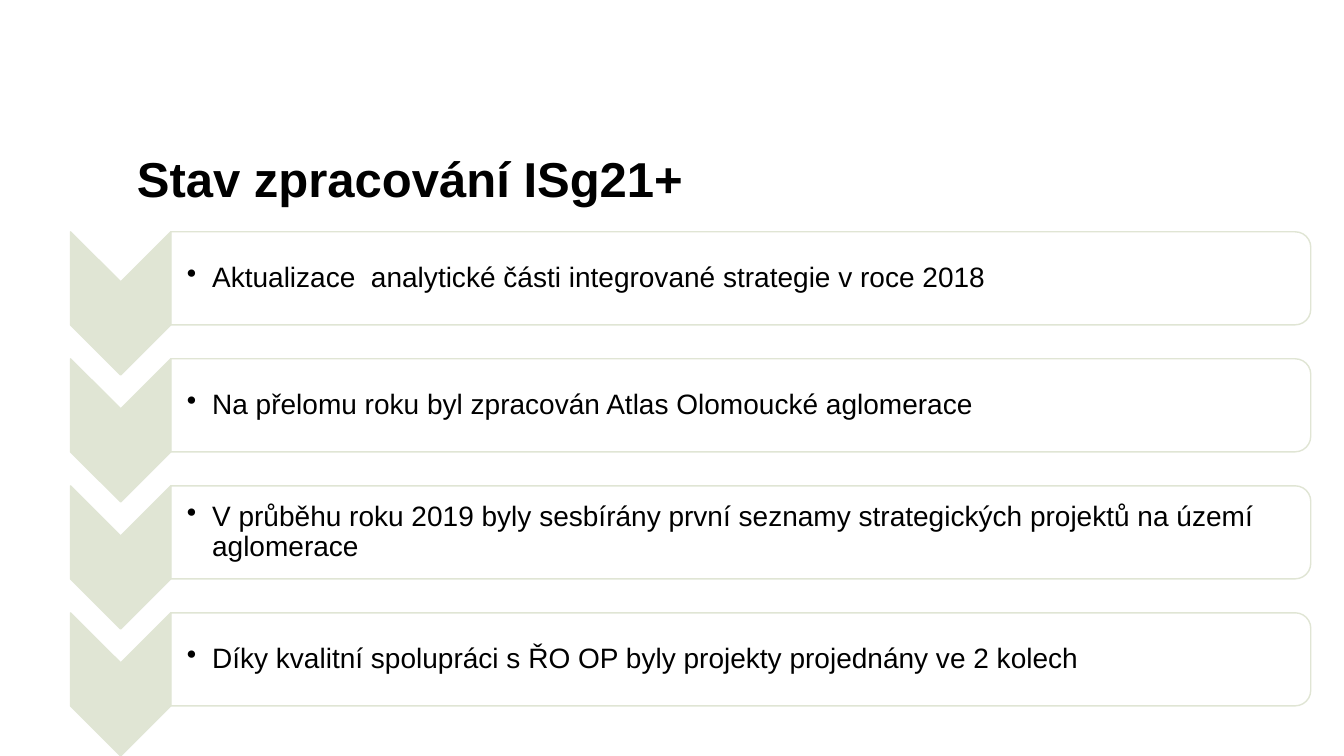
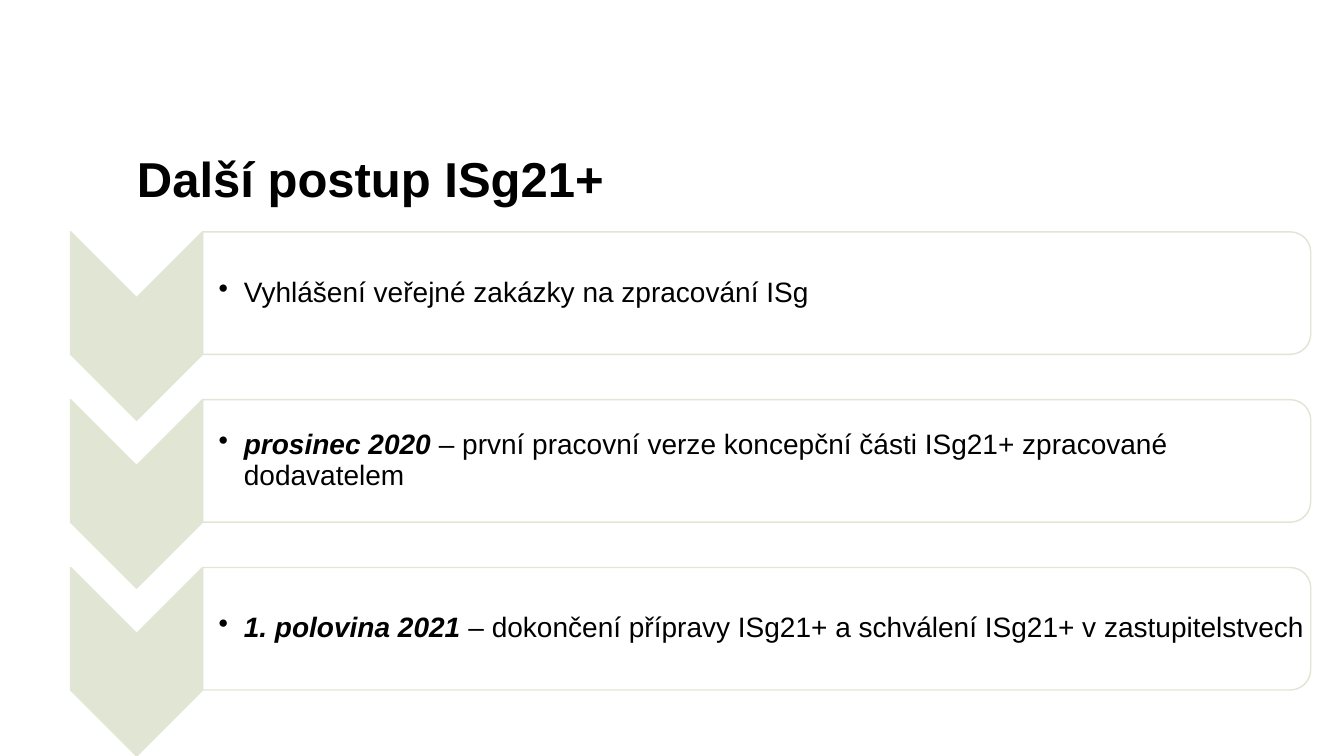
"""Builds two slides that list the steps of a strategy beside downward chevrons."""
from lxml.etree import SubElement
from pptx import Presentation
from pptx.dml.color import RGBColor
from pptx.enum.shapes import MSO_SHAPE
from pptx.enum.text import MSO_ANCHOR
from pptx.oxml.ns import qn
from pptx.util import Inches, Pt

COLORS = {"sage": "E0E5D4", "panel": "FFFFFF", "text": "000000"}
FONT = "Arial"
LEFT, RIGHT, TOP, BOTTOM = 0.7, 13.0, 2.3, 7.5
CHEVRON_WIDTH, PANEL_HEIGHT = 0.7, 0.65
PANEL_MARGIN = 0.05

SLIDES = [
    ("Stav zpracování ISg21+", 1.42, [
        ("", "Aktualizace  analytické části integrované strategie v roce 2018"),
        ("", "Na přelomu roku byl zpracován Atlas Olomoucké aglomerace"),
        ("", "V průběhu roku 2019 byly sesbírány první seznamy strategických "
             "projektů na území aglomerace"),
        ("", "Díky kvalitní spolupráci s ŘO OP byly projekty projednány ve 2 kolech"),
    ]),
    ("Další postup ISg21+", 1.87, [
        ("", "Vyhlášení veřejné zakázky na zpracování ISg"),
        ("prosinec 2020 ", "– první pracovní verze koncepční části ISg21+ "
                           "zpracované dodavatelem"),
        ("1. polovina 2021 ", "– dokončení přípravy ISg21+ a schválení ISg21+ "
                              "v zastupitelstvech"),
    ]),
]


def color(name):
    return RGBColor.from_string(COLORS[name])


def add_run(paragraph, text, size, bold=False, italic=False):
    run = paragraph.add_run()
    run.text = text
    run.font.name = FONT
    run.font.size = Pt(size)
    run.font.bold = bold
    run.font.italic = italic
    run.font.color.rgb = color("text")


def add_text_area(slide, left, top, width, height):
    area = slide.shapes.add_textbox(
        Inches(left), Inches(top), Inches(width), Inches(height))
    frame = area.text_frame
    frame.word_wrap = True
    frame.vertical_anchor = MSO_ANCHOR.MIDDLE
    frame.paragraphs[0].line_spacing = 0.9
    return frame


def add_title(slide, text):
    frame = add_text_area(slide, 1.26, 1.44, 11.5, 0.73)
    add_run(frame.paragraphs[0], text, 35, bold=True)


def add_turned_shape(slide, kind, left, top, width, height, fill):
    """Adds a shape turned by 90 degrees that covers the given area."""
    turned = slide.shapes.add_shape(
        kind, Inches(left + (width - height) / 2),
        Inches(top + (height - width) / 2), Inches(height), Inches(width))
    turned.rotation = 90
    turned.shadow.inherit = False
    turned.fill.solid()
    turned.fill.fore_color.rgb = color(fill)
    turned.line.color.rgb = color("sage")
    turned.line.width = Pt(1)
    return turned


def set_opacity(shape, percent):
    fill_color = shape.fill._xPr.find(qn("a:solidFill"))[0]
    SubElement(fill_color, qn("a:alpha"), val=str(percent * 1000))


def add_bullet(paragraph):
    properties = paragraph._p.get_or_add_pPr()
    properties.set("marL", str(Inches(0.25)))
    properties.set("indent", str(Inches(-0.25)))
    SubElement(properties, qn("a:buChar"), char="•")


def add_step_text(slide, left, top, width, height, lead, text):
    frame = add_text_area(slide, left, top, width, height)
    frame.margin_left = Inches(0.16)
    frame.margin_top = frame.margin_right = frame.margin_bottom = Inches(0.01)
    step = frame.paragraphs[0]
    add_bullet(step)
    if lead:
        add_run(step, lead, 20, bold=True, italic=True)
    add_run(step, text, 20)


def add_step(slide, top, chevron_height, lead, text):
    chevron_width = CHEVRON_WIDTH * chevron_height
    panel_height = PANEL_HEIGHT * chevron_height
    panel_left = LEFT + chevron_width
    panel_width = RIGHT - panel_left
    add_turned_shape(slide, MSO_SHAPE.CHEVRON, LEFT, top,
                     chevron_width, chevron_height, "sage")
    panel = add_turned_shape(slide, MSO_SHAPE.ROUND_2_SAME_RECTANGLE, panel_left,
                             top, panel_width, panel_height, "panel")
    set_opacity(panel, 90)
    add_step_text(slide, panel_left, top + PANEL_MARGIN, panel_width - PANEL_MARGIN,
                  panel_height - 2 * PANEL_MARGIN, lead, text)


def add_steps(slide, chevron_height, steps):
    pitch = (BOTTOM - TOP - chevron_height) / (len(steps) - 1)
    for index, (lead, text) in enumerate(steps):
        add_step(slide, TOP + index * pitch, chevron_height, lead, text)


def main():
    deck = Presentation()
    deck.slide_width = Inches(13.33)
    deck.slide_height = Inches(7.5)
    for title, chevron_height, steps in SLIDES:
        slide = deck.slides.add_slide(deck.slide_layouts[6])
        add_title(slide, title)
        add_steps(slide, chevron_height, steps)
    deck.save("out.pptx")


if __name__ == "__main__":
    main()
